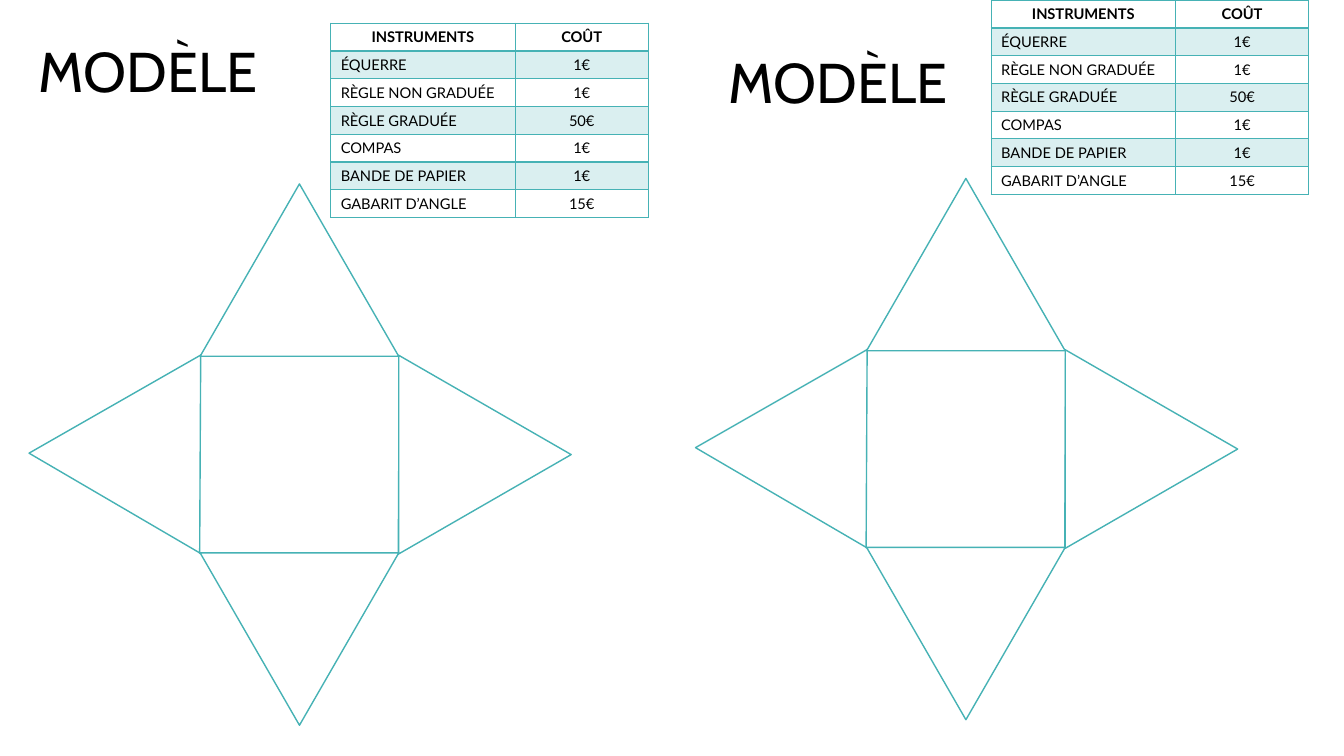
from lxml.etree import SubElement
from pptx import Presentation
from pptx.dml.color import RGBColor
from pptx.enum.shapes import MSO_SHAPE
from pptx.enum.text import MSO_ANCHOR, MSO_AUTO_SIZE, PP_ALIGN
from pptx.oxml.ns import qn
from pptx.util import Inches, Pt

# Content
TITLE = "MODÈLE"
COSTS = [
    ("INSTRUMENTS", "COÛT"),
    ("ÉQUERRE", "1€"),
    ("RÈGLE NON GRADUÉE", "1€"),
    ("RÈGLE GRADUÉE", "50€"),
    ("COMPAS", "1€"),
    ("BANDE DE PAPIER", "1€"),
    ("GABARIT D’ANGLE", "15€"),
]
COLORS = {"teal": "46B2B5", "black": "000000", "white": "FFFFFF"}

# Layout in inches: the two halves of the sheet
HALVES = [
    {"title": (0.28, 0.31), "table": (3.28, 0.23), "net": (2.97, 4.51)},
    {"title": (7.13, 0.42), "table": (9.83, 0), "net": (9.58, 4.455)},
]
TITLE_SIZE = (2.92, 0.77)
COLUMN_WIDTHS = (1.83, 1.32)
TABLE_HEIGHT = 1.93
TINT = 20  # opacity of the shaded rows, percent

# Pyramid net: side of the square, height and middle of each face
SIDE, FACE = 1.97, 1.71
REACH = (SIDE + FACE) / 2
NET_PARTS = [  # kind, offset of the middle, height, rotation
    (MSO_SHAPE.ISOSCELES_TRIANGLE, (-1.4, -0.255), FACE, 30.3),
    (MSO_SHAPE.RECTANGLE, (0, 0), SIDE, 90.3),
    (MSO_SHAPE.ISOSCELES_TRIANGLE, (REACH, 0), FACE, 90),
    (MSO_SHAPE.ISOSCELES_TRIANGLE, (0, -REACH + 0.01), FACE, 0),
    (MSO_SHAPE.ISOSCELES_TRIANGLE, (0, REACH - 0.01), FACE, 180),
]


def color(name):
    return RGBColor.from_string(COLORS[name])


def set_values(target, values):
    for name, value in values.items():
        setattr(target, name, value)


def write(frame, text, font, alignment=PP_ALIGN.LEFT):
    paragraph = frame.paragraphs[0]
    paragraph.alignment = alignment
    run = paragraph.add_run()
    run.text = text
    set_values(run.font, font)
    run.font.color.rgb = color("black")


def add_title(shape, corner):
    box = dict(zip(("left", "top", "width", "height"), map(Inches, corner + TITLE_SIZE)))
    set_values(shape, box)
    set_values(shape.text_frame, {
        "word_wrap": True,
        "vertical_anchor": MSO_ANCHOR.TOP,
        "auto_size": MSO_AUTO_SIZE.SHAPE_TO_FIT_TEXT,
    })
    write(shape.text_frame, TITLE, {"name": "Cabin", "size": Pt(40), "bold": False})


def add_borders(cell, bottom_width):
    properties = cell._tc.get_or_add_tcPr()
    for edge, width in (("L", 1), ("R", 1), ("T", 1), ("B", bottom_width)):
        line = SubElement(properties, qn(f"a:ln{edge}"), w=str(Pt(width)))
        fill = SubElement(line, qn("a:solidFill"))
        SubElement(fill, qn("a:srgbClr"), val=COLORS["teal"])


def add_costs(shapes, corner):
    left, top = map(Inches, corner)
    table = shapes.add_table(len(COSTS), len(COLUMN_WIDTHS), left, top,
                             Inches(sum(COLUMN_WIDTHS)), Inches(TABLE_HEIGHT)).table
    table.horz_banding = table.first_row = False
    for column, width in zip(table.columns, COLUMN_WIDTHS):
        column.width = Inches(width)
    for row, texts in enumerate(COSTS):
        for column, text in enumerate(texts):
            cell = table.cell(row, column)
            header = row == 0
            centred = header or column == 1
            write(cell.text_frame, text,
                  {"name": "Lato", "size": Pt(10.5), "bold": header},
                  PP_ALIGN.CENTER if centred else PP_ALIGN.LEFT)
            add_borders(cell, 2 if header else 1)
            if row % 2:
                cell.fill.solid()
                cell.fill.fore_color.rgb = color("teal")
                tint = cell._tc.tcPr.find(qn("a:solidFill"))[0]
                SubElement(tint, qn("a:alpha"), val=str(TINT * 1000))
            else:
                cell.fill.background()


def add_net(shapes, center):
    group = shapes.add_group_shape()
    for kind, offset, height, rotation in NET_PARTS:
        x, y = center[0] + offset[0], center[1] + offset[1]
        shape = group.shapes.add_shape(kind, Inches(x - SIDE / 2), Inches(y - height / 2),
                                       Inches(SIDE), Inches(height))
        shape.rotation = rotation
        shape.shadow.inherit = False
        shape.fill.solid()
        shape.fill.fore_color.rgb = color("white")
        shape.line.color.rgb = color("teal")
        shape.line.width = Pt(1)


def main():
    presentation = Presentation()
    set_values(presentation, {"slide_width": Inches(13.33), "slide_height": Inches(7.5)})
    slide = presentation.slides.add_slide(presentation.slide_layouts[5])
    shapes = slide.shapes

    # Titles: the placeholder on the left, a text box on the right
    titles = (shapes.title, shapes.add_textbox(0, 0, 0, 0))
    for title, half in zip(titles, HALVES):
        add_title(title, half["title"])
        add_costs(shapes, half["table"])
        add_net(shapes, half["net"])

    presentation.save("out.pptx")


if __name__ == "__main__":
    main()
